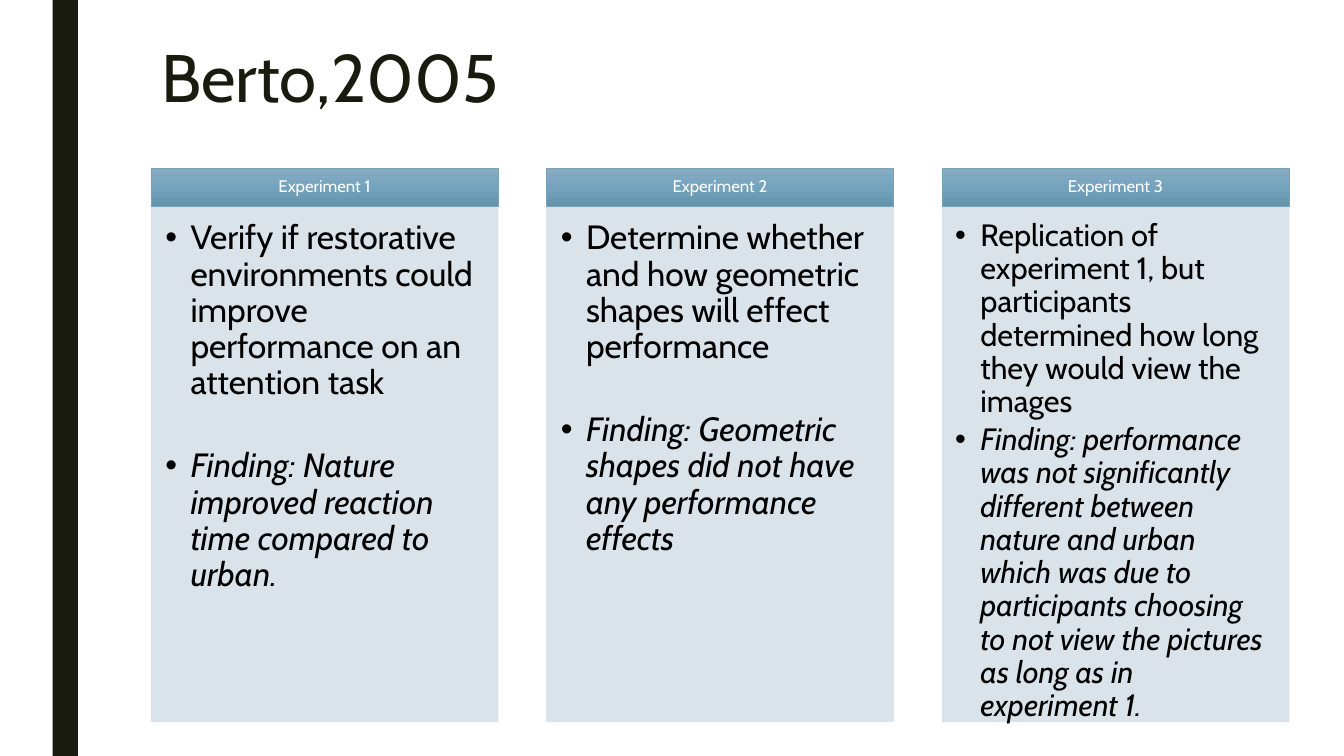
from copy import deepcopy
from dataclasses import dataclass

from lxml.etree import SubElement
from pptx import Presentation
from pptx.dml.color import RGBColor
from pptx.enum.shapes import MSO_SHAPE as Preset
from pptx.enum.text import MSO_ANCHOR as Anchor, MSO_AUTO_SIZE as AutoSize, PP_ALIGN as Align
from pptx.oxml.ns import qn
from pptx.util import Pt

FONT = "Cabin"
DARK = "191B0E"
WHITE = "FFFFFF"
BLACK = "000000"
PANEL = "D6E0E7"
HEADER_LINE = "77A2BB"
HEADER_STOPS = ((0, "88ADC3"), (0.5, "74A3BE"), (1, "6392AD"))
FIRST_LEFT, PITCH, WIDTH = 108, 282.5, 247.7
HEADER_TOP, HEADER_HEIGHT = 120.2, 27.4
PANEL_HEIGHT = 367.9


@dataclass
class Experiment:
    heading: str
    aim: str
    finding: str
    size: float
    gap: float
    insets: tuple[float, float, float, float]


WIDE_INSETS = (10.1, 10.1, 13.5, 15.1)
EXPERIMENTS = [
    Experiment(
        "Experiment 1",
        "Verify if restorative environments could improve performance on an attention task",
        "Finding: Nature improved reaction time compared to urban.",
        24, 33.4, WIDE_INSETS,
    ),
    Experiment(
        "Experiment 2",
        "Determine whether and how geometric shapes will effect performance",
        "Finding: Geometric shapes did not have any performance effects",
        24, 33.4, WIDE_INSETS,
    ),
    Experiment(
        "Experiment 3",
        "Replication of experiment 1, but participants determined how long they would view the images",
        "Finding: performance was not significantly different between nature and urban which was "
        "due to participants choosing to not view the pictures as long as in experiment 1.",
        22, 3.4, (9.3, 9.3, 12.4, 13.9),
    ),
]


def rgb(value: str) -> RGBColor:
    return RGBColor.from_string(value)


def place(shape, left: float, top: float, width: float, height: float) -> None:
    shape.left, shape.top = Pt(left), Pt(top)
    shape.width, shape.height = Pt(width), Pt(height)


def set_frame(shape, anchor, insets: tuple[float, float, float, float]) -> None:
    frame = shape.text_frame
    frame.word_wrap = True
    frame.auto_size = AutoSize.NONE
    frame.vertical_anchor = anchor
    frame.margin_left, frame.margin_top, frame.margin_right, frame.margin_bottom = map(Pt, insets)


def write(para, words: str, size: float, color: str, align, italic: bool = False) -> None:
    para.alignment = align
    para.line_spacing = 0.9
    para.space_before = Pt(0)
    span = para.add_run()
    span.text = words
    span.font.name = FONT
    span.font.size = Pt(size)
    span.font.bold = False
    span.font.italic = italic
    span.font.color.rgb = rgb(color)


def add_bullet(para) -> None:
    properties = para._p.get_or_add_pPr()
    properties.set("marL", str(Pt(18)))
    properties.set("indent", str(-Pt(18)))
    SubElement(properties, qn("a:buFont")).set("typeface", "Arial")
    SubElement(properties, qn("a:buChar")).set("char", "•")


def draw_rectangle(page, left: float, top: float, width: float, height: float):
    box = page.shapes.add_shape(Preset.RECTANGLE, Pt(left), Pt(top), Pt(width), Pt(height))
    box.shadow.inherit = False
    return box


def draw_header(page, experiment: Experiment, left: float) -> None:
    box = draw_rectangle(page, left, HEADER_TOP, WIDTH, HEADER_HEIGHT)
    box.fill.gradient()
    box.fill.gradient_angle = 270
    stop_list = box._element.spPr.find(qn("a:gradFill")).find(qn("a:gsLst"))
    stop_list.append(deepcopy(stop_list[-1]))
    for stop, (position, color) in zip(box.fill.gradient_stops, HEADER_STOPS):
        stop.position = position
        stop.color.rgb = rgb(color)
    box.line.color.rgb = rgb(HEADER_LINE)
    box.line.width = Pt(0.5)
    set_frame(box, Anchor.MIDDLE, (6.7, 3.8, 6.7, 3.8))
    write(box.text_frame.paragraphs[0], experiment.heading, 12, WHITE, Align.CENTER)


def fill_panel(box, experiment: Experiment, left: float) -> None:
    place(box, left, HEADER_TOP + HEADER_HEIGHT, WIDTH, PANEL_HEIGHT)
    box.fill.solid()
    box.fill.fore_color.rgb = rgb(PANEL)
    box.line.color.rgb = rgb(PANEL)
    box.line.width = Pt(0.5)
    for color in box._element.spPr.iter(qn("a:srgbClr")):
        SubElement(color, qn("a:alpha")).set("val", "90000")
    set_frame(box, Anchor.TOP, experiment.insets)
    aim = box.text_frame.paragraphs[0]
    finding = box.text_frame.add_paragraph()
    write(aim, experiment.aim, experiment.size, BLACK, Align.LEFT)
    write(finding, experiment.finding, experiment.size, BLACK, Align.LEFT, italic=True)
    aim.space_after = Pt(experiment.gap)
    for para in (aim, finding):
        add_bullet(para)


def main() -> None:
    deck = Presentation()
    deck.slide_width, deck.slide_height = Pt(960), Pt(540)
    page = deck.slides.add_slide(deck.slide_layouts.get_by_name("Comparison"))
    title, *panels = page.placeholders
    spare = panels.pop()
    spare._element.getparent().remove(spare._element)

    bar = draw_rectangle(page, 37.6, 0, 18, 540)
    bar.fill.solid()
    bar.fill.fore_color.rgb = rgb(DARK)
    bar.line.fill.background()

    place(title, 108, 28.1, 756, 116.6)
    set_frame(title, Anchor.TOP, (7.2, 3.6, 7.2, 3.6))
    write(title.text_frame.paragraphs[0], "Berto,2005", 48, DARK, Align.LEFT)

    for column, (panel, experiment) in enumerate(zip(panels, EXPERIMENTS)):
        left = FIRST_LEFT + column * PITCH
        fill_panel(panel, experiment, left)
        draw_header(page, experiment, left)

    deck.save("out.pptx")


if __name__ == "__main__":
    main()
